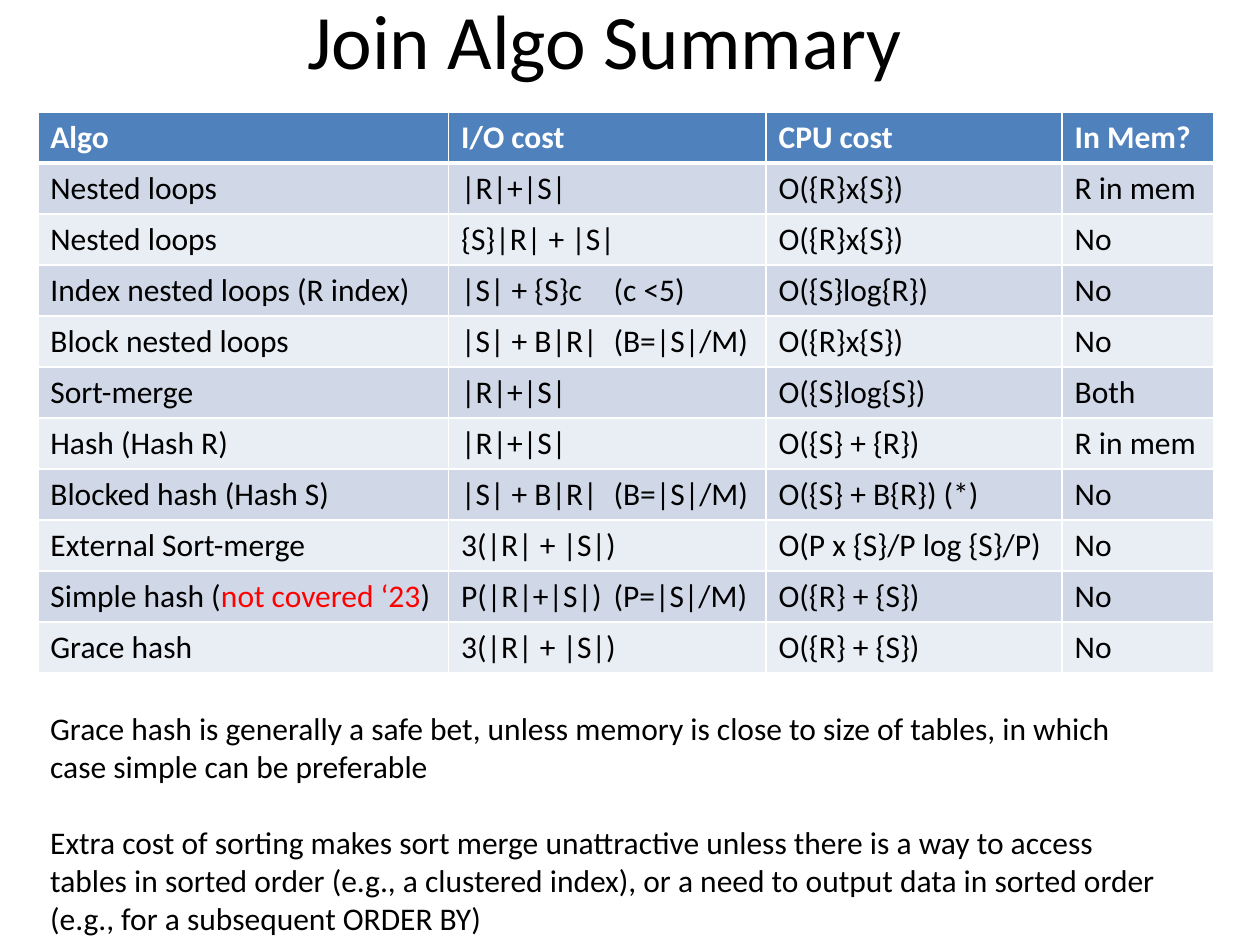
from lxml.etree import SubElement
from pptx import Presentation
from pptx.dml.color import RGBColor
from pptx.enum.text import MSO_ANCHOR, PP_ALIGN
from pptx.oxml.ns import qn
from pptx.util import Inches, Pt

FONT = "Calibri"
BLACK, WHITE, RED = "000000", "FFFFFF", "FF0000"
HEADER_FILL, BAND_FILLS = "4F81BD", ("D0D8E8", "E9EDF4")

LEFT, TEXT_WIDTH = 0.3, 9
TABLE_TOP, ROW_HEIGHT = 0.89, 0.405
COLUMN_WIDTHS = (3.26, 2.52, 2.35, 1.2)
FORMULA_NOTE_TAB = 1.21

HEADERS = ("Algo", "I/O cost", "CPU cost", "In Mem?")
# A cell is plain text, or a list of (text, colour) runs
ALGORITHMS = (
    ("Nested loops", "|R|+|S|", "O({R}x{S})", "R in mem"),
    ("Nested loops", "{S}|R| + |S|", "O({R}x{S})", "No"),
    ("Index nested loops (R index)", "|S| + {S}c\t(c <5)", "O({S}log{R})", "No"),
    ("Block nested loops", "|S| + B|R|\t(B=|S|/M)", "O({R}x{S})", "No"),
    ("Sort-merge", "|R|+|S|", "O({S}log{S})", "Both"),
    ("Hash (Hash R)", "|R|+|S|", "O({S} + {R})", "R in mem"),
    ("Blocked hash (Hash S)", "|S| + B|R|\t(B=|S|/M)", "O({S} + B{R}) (*)", "No"),
    ("External Sort-merge", "3(|R| + |S|)", "O(P x {S}/P log {S}/P)", "No"),
    ([("Simple hash (", BLACK), ("not covered ‘23", RED), (")", BLACK)],
     "P(|R|+|S|)\t(P=|S|/M)", "O({R} + {S})", "No"),
    ("Grace hash", "3(|R| + |S|)", "O({R} + {S})", "No"),
)
REMARKS = (
    "Grace hash is generally a safe bet, unless memory is close to size of "
    "tables, in which case simple can be preferable",
    "Extra cost of sorting makes sort merge unattractive unless there is a way "
    "to access tables in sorted order (e.g., a clustered index), or a need to "
    "output data in sorted order (e.g., for a subsequent ORDER BY)",
)


def colour(hex_string):
    return RGBColor.from_string(hex_string)


def add_run(paragraph, text, size=18, hex_colour=BLACK, bold=False):
    run = paragraph.add_run()
    run.text = text
    run.font.name, run.font.size, run.font.bold = FONT, Pt(size), bold
    run.font.color.rgb = colour(hex_colour)


def add_text_box(slide, top, height, paragraphs, size, align=PP_ALIGN.LEFT,
                 anchor=MSO_ANCHOR.TOP):
    box = slide.shapes.add_textbox(
        Inches(LEFT), Inches(top), Inches(TEXT_WIDTH), Inches(height))
    frame = box.text_frame
    frame.word_wrap = True
    frame.vertical_anchor = anchor
    for index, text in enumerate(paragraphs):
        paragraph = frame.add_paragraph() if index else frame.paragraphs[0]
        paragraph.alignment = align
        if index:
            paragraph.space_before = Pt(22)
        add_run(paragraph, text, size)


def add_tab_stop(paragraph, position):
    tab_list = SubElement(paragraph._p.get_or_add_pPr(), qn("a:tabLst"))
    SubElement(tab_list, qn("a:tab"), pos=str(Inches(position)), algn="l")


def set_borders(cell, top=1, bottom=1):
    # Borders must come before the fill in the cell properties
    properties = cell._tc.get_or_add_tcPr()
    for side, width in (("L", 1), ("R", 1), ("T", top), ("B", bottom)):
        line = SubElement(properties, qn(f"a:ln{side}"), w=str(Pt(width)))
        fill = SubElement(line, qn("a:solidFill"))
        SubElement(fill, qn("a:srgbClr"), val=WHITE)


def fill_cell(cell, content, row):
    header = row == 0
    set_borders(cell, top=3 if row == 1 else 1, bottom=3 if header else 1)
    cell.fill.solid()
    cell.fill.fore_color.rgb = colour(
        HEADER_FILL if header else BAND_FILLS[(row - 1) % 2])
    paragraph = cell.text_frame.paragraphs[0]
    if isinstance(content, str):
        content = [(content, WHITE if header else BLACK)]
    for text, hex_colour in content:
        if "\t" in text:
            add_tab_stop(paragraph, FORMULA_NOTE_TAB)
        add_run(paragraph, text, hex_colour=hex_colour, bold=header)


def add_cost_table(slide):
    rows = (HEADERS,) + ALGORITHMS
    table = slide.shapes.add_table(
        len(rows), len(HEADERS), Inches(LEFT), Inches(TABLE_TOP),
        Inches(sum(COLUMN_WIDTHS)), Inches(ROW_HEIGHT * len(rows))).table
    for column, width in zip(table.columns, COLUMN_WIDTHS):
        column.width = Inches(width)
    for row, contents in enumerate(rows):
        for column, content in enumerate(contents):
            fill_cell(table.cell(row, column), content, row)


def main():
    presentation = Presentation()
    presentation.slide_width, presentation.slide_height = Inches(10), Inches(7.5)
    slide = presentation.slides.add_slide(presentation.slide_layouts[6])

    # Title
    add_text_box(slide, -0.32, 1.25, ["Join Algo Summary"], 44,
                 PP_ALIGN.CENTER, MSO_ANCHOR.MIDDLE)
    # Remarks below the table
    add_text_box(slide, 5.58, 2.52, REMARKS, 18)
    # Costs of each algorithm
    add_cost_table(slide)

    presentation.save("out.pptx")


if __name__ == "__main__":
    main()
